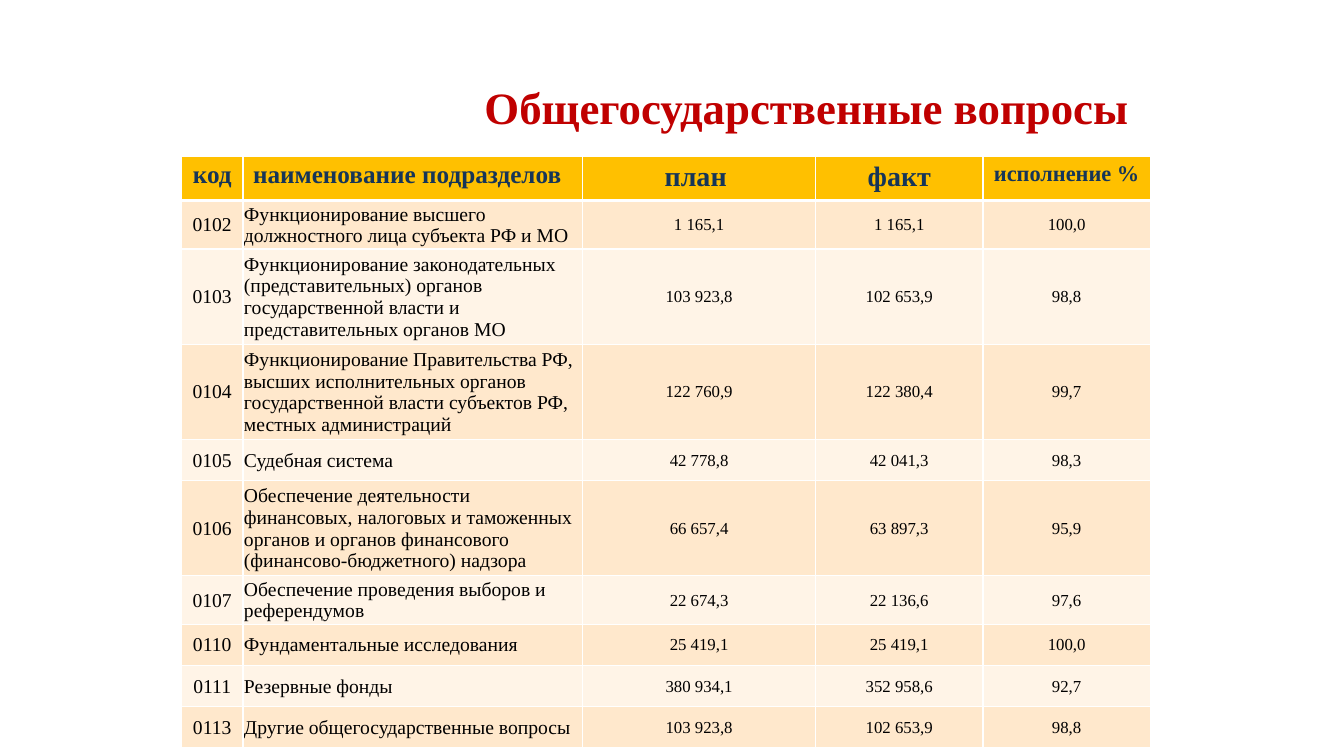
from dataclasses import dataclass

from lxml import etree
from pptx import Presentation
from pptx.dml.color import RGBColor
from pptx.enum import text
from pptx.oxml import ns
from pptx.util import Inches, Pt


@dataclass(frozen=True)
class Theme:
    font: str = "Times New Roman"
    title: str = "C00000"
    header_text: str = "163558"
    body_text: str = "000000"
    header_fill: str = "FFC000"
    bands: tuple = ("FFE8CC", "FFF4E7")
    border: str = "FFFFFF"
    title_size: int = 32


@dataclass(frozen=True)
class Column:
    heading: str
    width: float
    heading_size: int
    body_size: int
    heading_align: text.PP_ALIGN = text.PP_ALIGN.CENTER
    body_align: text.PP_ALIGN = text.PP_ALIGN.CENTER


@dataclass(frozen=True)
class Section:
    code: str
    name: str
    plan: str
    fact: str
    percent: str
    lines: int = 1


THEME = Theme()
HEADER_HEIGHT = 0.44
ROW_HEIGHTS = {1: 0.41, 2: 0.48, 4: 0.94}
LEFT = text.PP_ALIGN.LEFT

COLUMNS = [
    Column("код", 0.61, 18, 14),
    Column("наименование подразделов", 3.37, 18, 14, LEFT, LEFT),
    Column("план ", 2.31, 20, 12),
    Column("факт", 1.66, 20, 12),
    Column("исполнение %", 1.66, 16, 12),
]

SECTIONS = [
    Section("0102", "Функционирование высшего должностного лица субъекта РФ и МО",
            "1 165,1", "1 165,1", "100,0", 2),
    Section("0103", "Функционирование законодательных (представительных) органов "
            "государственной власти и представительных органов МО",
            "103 923,8", "102 653,9", "98,8", 4),
    Section("0104", "Функционирование Правительства РФ, высших исполнительных органов "
            "государственной власти субъектов РФ, местных администраций",
            "122 760,9", "122 380,4", "99,7", 4),
    Section("0105", "Судебная система", "42 778,8", "42 041,3", "98,3"),
    Section("0106", "Обеспечение деятельности финансовых, налоговых и таможенных органов "
            "и органов финансового (финансово-бюджетного) надзора",
            "66 657,4", "63 897,3", "95,9", 4),
    Section("0107", "Обеспечение проведения выборов и референдумов",
            "22 674,3", "22 136,6", "97,6", 2),
    Section("0110", "Фундаментальные исследования", "25 419,1", "25 419,1", "100,0"),
    Section("0111", "Резервные фонды", "380 934,1", "352 958,6", "92,7"),
    Section("0113", "Другие общегосударственные вопросы", "103 923,8", "102 653,9", "98,8"),
]


def write(frame, value: str, size: int, color: str, bold: bool, align: text.PP_ALIGN) -> None:
    frame.text = value
    p = frame.paragraphs[0]
    p.alignment = align
    font = p.runs[0].font
    font.name = THEME.font
    font.size = Pt(size)
    font.bold = bold
    font.color.rgb = RGBColor.from_string(color)


def set_borders(cell, top: int, bottom: int) -> None:
    tc_pr = cell._tc.get_or_add_tcPr()
    for tag, width in (("a:lnL", 1), ("a:lnR", 1), ("a:lnT", top), ("a:lnB", bottom)):
        ln = etree.SubElement(tc_pr, ns.qn(tag), w=str(Pt(width)))
        fill = etree.SubElement(ln, ns.qn("a:solidFill"))
        etree.SubElement(fill, ns.qn("a:srgbClr"), val=THEME.border)


def set_fill(cell, color: str) -> None:
    cell.fill.solid()
    cell.fill.fore_color.rgb = RGBColor.from_string(color)


def draw_header_cell(cell, column: Column) -> None:
    set_borders(cell, 1, 3)
    set_fill(cell, THEME.header_fill)
    write(cell.text_frame, column.heading, column.heading_size,
          THEME.header_text, True, column.heading_align)


def draw_body_cell(cell, column: Column, value: str, row: int) -> None:
    set_borders(cell, 3 if row == 0 else 1, 1)
    set_fill(cell, THEME.bands[row % 2])
    cell.margin_left = cell.margin_right = cell.margin_top = Inches(0.01)
    cell.margin_bottom = 0
    cell.vertical_anchor = text.MSO_ANCHOR.MIDDLE
    write(cell.text_frame, value, column.body_size,
          THEME.body_text, False, column.body_align)


def draw_table(s) -> None:
    heights = [HEADER_HEIGHT] + [ROW_HEIGHTS[section.lines] for section in SECTIONS]
    width = sum(column.width for column in COLUMNS)
    table = s.shapes.add_table(len(heights), len(COLUMNS), Inches(1.8), Inches(1.55),
                               Inches(width), Inches(sum(heights))).table
    for row, height in zip(table.rows, heights):
        row.height = Inches(height)
    for c, column in enumerate(COLUMNS):
        table.columns[c].width = Inches(column.width)
        draw_header_cell(table.cell(0, c), column)
    for r, section in enumerate(SECTIONS):
        values = (section.code, section.name, section.plan, section.fact, section.percent)
        for c, (column, value) in enumerate(zip(COLUMNS, values)):
            draw_body_cell(table.cell(r + 1, c), column, value, r)


def draw_title(s) -> None:
    sp = s.shapes.title
    sp.left, sp.top, sp.width, sp.height = (Inches(v) for v in (4.45, 0.74, 7.1, 0.64))
    tf = sp.text_frame
    write(tf, "Общегосударственные вопросы", THEME.title_size,
          THEME.title, True, text.PP_ALIGN.CENTER)
    tf.word_wrap = True
    tf.auto_size = text.MSO_AUTO_SIZE.SHAPE_TO_FIT_TEXT
    tf.vertical_anchor = text.MSO_ANCHOR.TOP


def main() -> None:
    prs = Presentation()
    prs.slide_width, prs.slide_height = Inches(13.33), Inches(7.5)
    s = prs.slides.add_slide(prs.slide_layouts[5])
    draw_title(s)
    draw_table(s)
    prs.save("out.pptx")


if __name__ == "__main__":
    main()
